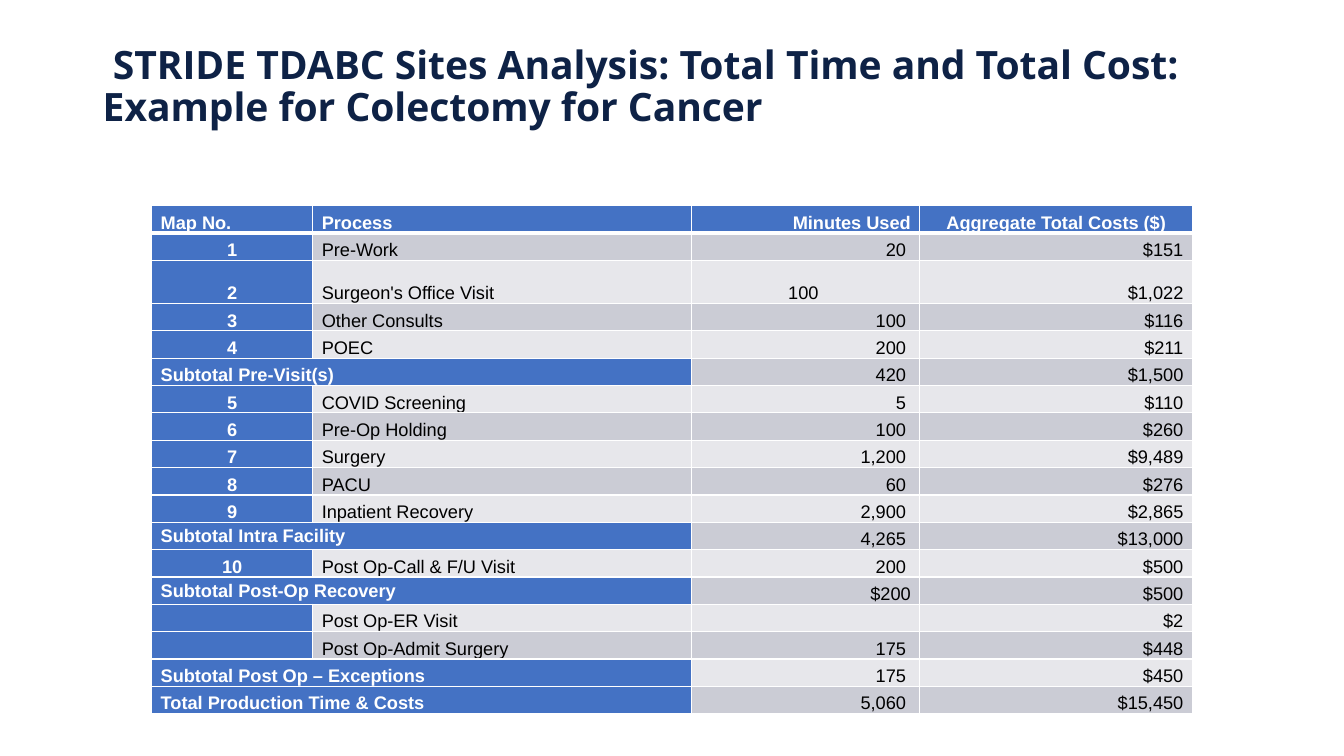
from lxml import etree
from pptx import Presentation
from pptx.dml.color import RGBColor
from pptx.enum import text as t
from pptx.oxml import ns
from pptx.util import Cm, Pt

HUES = {"navy": "0E2246", "blue": "4472C4", "dark": "CBCCD5",
        "light": "E7E7EB", "white": "FFFFFF", "black": "000000"}
LEFT, MID, RIGHT = t.PP_ALIGN.LEFT, t.PP_ALIGN.CENTER, t.PP_ALIGN.RIGHT
TITLE = " STRIDE TDABC Sites Analysis: Total Time and Total Cost: Example for Colectomy for Cancer"
COLS = (4.06, 9.55, 5.75, 6.87)
ROW, TALL = 0.69, 1.09
PAD, WIDE = 0.23, 0.35
SIZE = 13

# A row without a process is a subtotal: its label spans two columns.
ROWS = [
    ("Map No.", "Process", "Minutes Used", "Aggregate Total Costs ($)"),
    ("1", "Pre-Work", "20", "$151"),
    ("2", "Surgeon's Office Visit", "100", "$1,022"),
    ("3", "Other Consults", "100", "$116"),
    ("4", "POEC", "200", "$211"),
    ("Subtotal Pre-Visit(s)", "", "420", "$1,500"),
    ("5", "COVID Screening", "5", "$110"),
    ("6", "Pre-Op Holding", "100", "$260"),
    ("7", "Surgery", "1,200", "$9,489"),
    ("8", "PACU", "60", "$276"),
    ("9", "Inpatient Recovery", "2,900", "$2,865"),
    ("Subtotal Intra Facility", "", "4,265", "$13,000"),
    ("10", "Post Op-Call & F/U Visit", "200", "$500"),
    ("Subtotal Post-Op Recovery", "", "$200", "$500"),
    ("", "Post Op-ER Visit", "", "$2"),
    ("", "Post Op-Admit Surgery", "175", "$448"),
    ("Subtotal Post Op – Exceptions", "", "175", "$450"),
    ("Total Production Time & Costs", "", "5,060", "$15,450"),
]
VISIT = 2
RAISED = ("Subtotal Intra Facility", "Subtotal Post-Op Recovery")


def rgb(name):
    return RGBColor.from_string(HUES[name])


def write(para, words, face, size, hue, bold):
    run = para.add_run()
    run.text = words
    font = run.font
    font.name, font.size, font.bold = face, Pt(size), bold
    font.color.rgb = rgb(hue)


def edge(cell, head):
    """Draw white cell borders, heavier below the header."""
    props = cell._tc.get_or_add_tcPr()
    for side in ("L", "R", "T", "B"):
        wide = 3 if head and side == "B" else 1
        line = etree.SubElement(props, ns.qn("a:ln" + side), w=str(Pt(wide)))
        fill = etree.SubElement(line, ns.qn("a:solidFill"))
        etree.SubElement(fill, ns.qn("a:srgbClr"), val=HUES["white"])


def align(r, c, row):
    if r == 0:
        return (LEFT, LEFT, RIGHT, MID)[c]
    if c == 0:
        return MID if row[1] else LEFT
    if c == 2 and r == VISIT:
        return MID
    return LEFT if c == 1 else RIGHT


def dress(cell, r, c, row):
    """Fill one cell with its text and look."""
    head = r == 0
    key = head or c == 0
    loose = c == 2 and not head and not row[c].startswith("$")
    cell.margin_left, cell.margin_right = Cm(PAD), Cm(WIDE if loose else PAD)
    cell.margin_top = cell.margin_bottom = 0
    middle = c == 0 and row[c] in RAISED
    cell.vertical_anchor = t.MSO_ANCHOR.MIDDLE if middle else t.MSO_ANCHOR.BOTTOM
    edge(cell, head)
    cell.fill.solid()
    cell.fill.fore_color.rgb = rgb("blue" if key else "dark" if r % 2 else "light")
    para = cell.text_frame.paragraphs[0]
    para.alignment, para.line_spacing = align(r, c, row), 1.07
    if row[c]:
        write(para, row[c], "Arial", SIZE, "white" if key else "black", key)
    else:
        etree.SubElement(para._p, ns.qn("a:endParaRPr"), sz=str(SIZE * 100))


def title(slide, x, y, w, h):
    frame = slide.shapes.add_textbox(Cm(x), Cm(y), Cm(w), Cm(h)).text_frame
    frame.word_wrap = True
    frame.vertical_anchor = t.MSO_ANCHOR.BOTTOM
    para = frame.paragraphs[0]
    para.line_spacing = 0.9
    write(para, TITLE, "Open Sans", 27.9, "navy", True)


def costs(slide, x, y):
    high = ROW * (len(ROWS) - 1) + TALL
    grid = slide.shapes.add_table(len(ROWS), len(COLS), Cm(x), Cm(y),
                                  Cm(sum(COLS)), Cm(high)).table
    grid.horz_banding = False
    for col, wide in zip(grid.columns, COLS):
        col.width = Cm(wide)
    for r, row in enumerate(ROWS):
        grid.rows[r].height = Cm(TALL if r == VISIT else ROW)
        for c in range(len(COLS)):
            dress(grid.cell(r, c), r, c, row)
        if not row[1]:
            grid.cell(r, 0).merge(grid.cell(r, 1))


def main():
    deck = Presentation()
    deck.slide_width, deck.slide_height = Cm(33.87), Cm(19.05)
    slide = deck.slides.add_slide(deck.slide_layouts[6])
    title(slide, 2.34, 0.81, 29.21, 2.59)
    costs(slide, 3.82, 5.18)
    deck.save("out.pptx")


if __name__ == "__main__":
    main()
